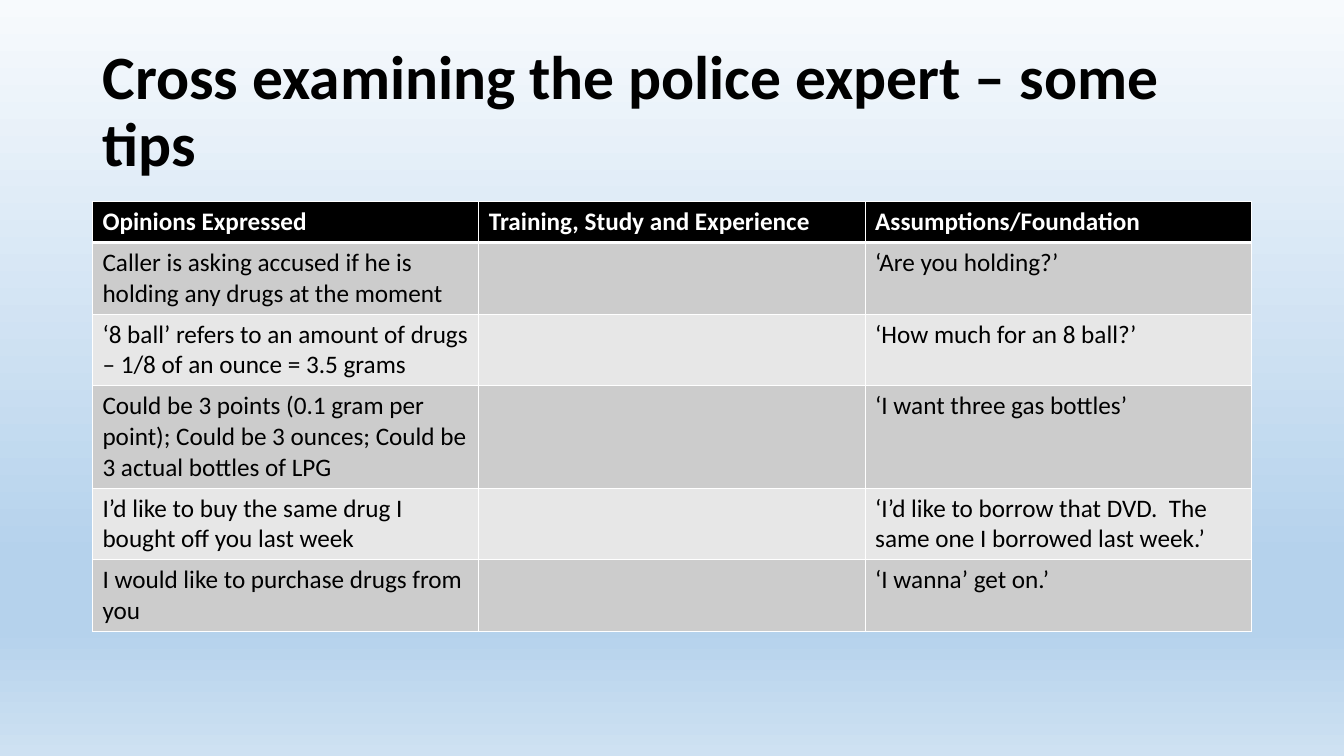
from lxml import etree
from pptx import Presentation
from pptx.dml.color import RGBColor
from pptx.enum.text import MSO_ANCHOR, MSO_AUTO_SIZE, PP_ALIGN
from pptx.oxml.ns import qn
from pptx.util import Cm, Pt

LEFT, MIDDLE, NO_FIT = PP_ALIGN.LEFT, MSO_ANCHOR.MIDDLE, MSO_AUTO_SIZE.NONE
TITLE_ONLY = 5

BLACK = RGBColor(0x00, 0x00, 0x00)
WHITE = RGBColor(0xFF, 0xFF, 0xFF)
DARK_BAND = RGBColor(0xCC, 0xCC, 0xCC)
LIGHT_BAND = RGBColor(0xE7, 0xE7, 0xE7)
SKY_STOPS = [
    (0, RGBColor(0xF7, 0xFA, 0xFD)),
    (74, RGBColor(0xB5, 0xD2, 0xEC)),
    (83, RGBColor(0xB5, 0xD2, 0xEC)),
    (100, RGBColor(0xCE, 0xE1, 0xF2)),
]

HEADINGS = ["Opinions Expressed", "Training, Study and Experience",
            "Assumptions/Foundation"]
OPINIONS = [
    ("Caller is asking accused if he is holding any drugs at the moment",
     "‘Are you holding?’"),
    ("‘8 ball’ refers to an amount of drugs – 1/8 of an ounce = 3.5 grams",
     "‘How much for an 8 ball?’"),
    ("Could be 3 points (0.1 gram per point); Could be 3 ounces; "
     "Could be 3 actual bottles of LPG",
     "‘I want three gas bottles’"),
    ("I’d like to buy the same drug I bought off you last week",
     "‘I’d like to borrow that DVD.  The same one I borrowed last week.’"),
    ("I would like to purchase drugs from you",
     "‘I wanna’ get on.’"),
]


def write(tf, text, size=18, color=BLACK, bold=False, spacing=None):
    p = tf.paragraphs[0]
    p.alignment = LEFT
    if spacing:
        p.line_spacing = spacing
    r = p.add_run()
    r.text = text
    r.font.name = "Calibri"
    r.font.size = Pt(size)
    r.font.bold = bold
    r.font.color.rgb = color


def add_color(parent, color):
    etree.SubElement(parent, qn("a:srgbClr"), val=str(color))


def set_borders(cell, color=WHITE, **widths):
    """Draw cell edges, given as L, R, T and B in points, in that order."""
    tc_pr = cell._tc.get_or_add_tcPr()
    for i, (edge, width) in enumerate(widths.items()):
        ln = etree.Element(qn(f"a:ln{edge}"), w=str(Pt(width)))
        add_color(etree.SubElement(ln, qn("a:solidFill")), color)
        tc_pr.insert(i, ln)


class Deck:
    """Holds the shared margins and the current slide."""

    left, width = Cm(2.33), Cm(29.21)

    def __init__(self):
        self.prs = Presentation()
        self.prs.slide_width, self.prs.slide_height = Cm(33.87), Cm(19.05)
        layout = self.prs.slide_layouts[TITLE_ONLY]
        self.s = self.prs.slides.add_slide(layout)

    def background(self, stops):
        fill = self.s.background.fill
        fill.gradient()
        fill.gradient_angle = 270
        gs_list = self.s.element.find(".//" + qn("a:gsLst"))
        for gs in list(gs_list):
            gs_list.remove(gs)
        for percent, color in stops:
            gs = etree.SubElement(gs_list, qn("a:gs"), pos=str(percent * 1000))
            add_color(gs, color)

    def title(self, text, top, height):
        sp = self.s.shapes.title
        sp.left, sp.top, sp.width, sp.height = self.left, top, self.width, height
        tf = sp.text_frame
        tf.word_wrap = True
        tf.auto_size = NO_FIT
        tf.vertical_anchor = MIDDLE
        write(tf, text, size=44, bold=True, spacing=0.9)

    def table(self, rows, top, row_height):
        """Add a table with a black heading row and banded grey rows."""
        table = self.s.shapes.add_table(
            len(rows), len(rows[0]), self.left, top, self.width,
            row_height * len(rows)).table
        for i, row in enumerate(rows):
            heading = i == 0
            band = DARK_BAND if i % 2 else LIGHT_BAND
            for j, text in enumerate(row):
                cell = table.cell(i, j)
                cell.fill.solid()
                cell.fill.fore_color.rgb = BLACK if heading else band
                set_borders(cell, L=1, R=1, T=3 if i == 1 else 1,
                            B=3 if heading else 1)
                if text:
                    write(cell.text_frame, text, bold=heading,
                          color=WHITE if heading else BLACK)


def main():
    deck = Deck()
    deck.background(SKY_STOPS)
    deck.title("Cross examining the police expert – some tips",
               top=Cm(1.01), height=Cm(3.68))
    rows = [HEADINGS] + [(opinion, "", words) for opinion, words in OPINIONS]
    deck.table(rows, top=Cm(5.08), row_height=Cm(1.03))
    deck.prs.save("out.pptx")


if __name__ == "__main__":
    main()
